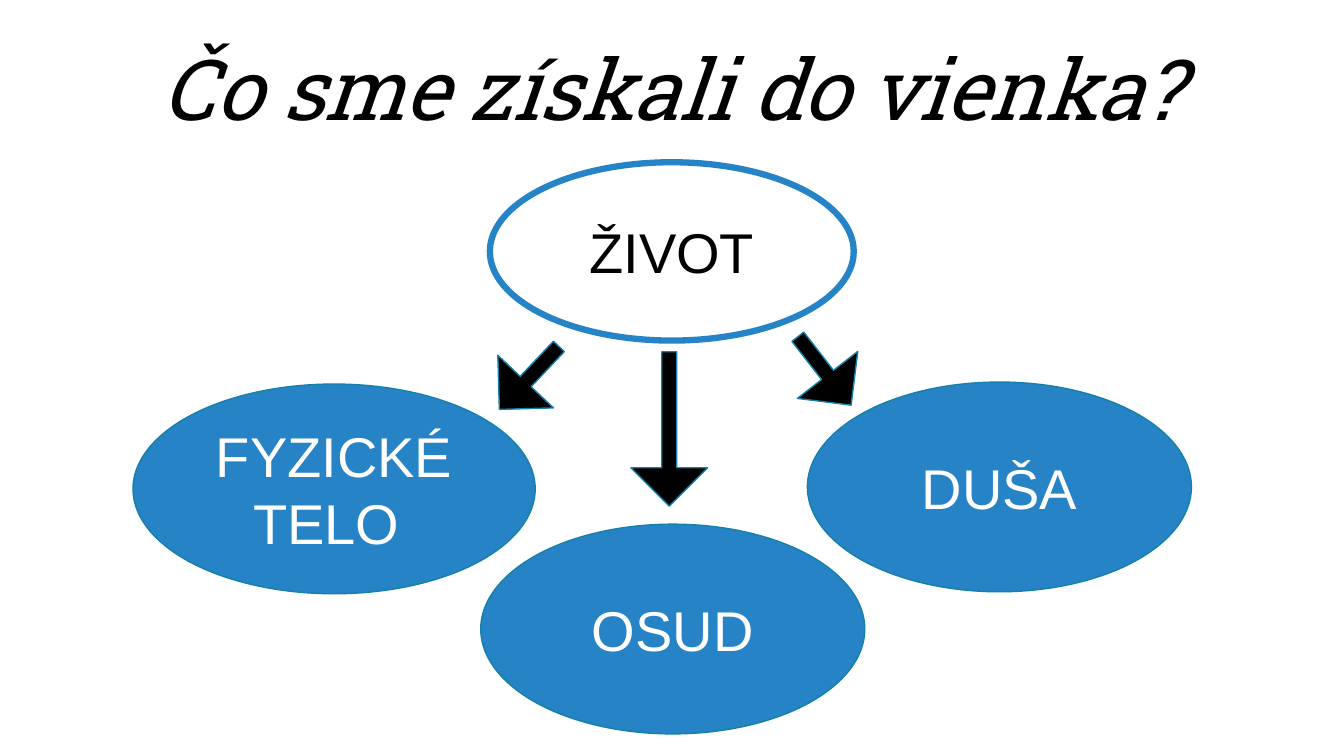
from pptx import Presentation
from pptx.dml.color import RGBColor as Rgb
from pptx.enum.shapes import MSO_SHAPE as Kind
from pptx.enum.text import MSO_ANCHOR as Anchor, MSO_AUTO_SIZE as Fit, PP_ALIGN as Align
from pptx.util import Pt

HEX = {"blue": "2683C6", "edge": "1580A9", "black": "000000", "white": "FFFFFF"}
TITLE = {"name": "Roboto Slab", "size": Pt(60), "italic": True, "bold": False}
LABEL = {"name": "Arial", "size": Pt(40)}

# Label, left, top, width, height
PARTS = [
    ("FYZICKÉ TELO ", 95, 274.3, 287.3, 149.8),
    ("DUŠA", 576.7, 272.9, 274.3, 149.8),
    ("OSUD", 343.4, 374.4, 274.3, 149.8),
]
# Left, top, height, turn
ARROWS = [
    (561.6, 234, 61.9, 322.1),
    (450.7, 251.3, 110.2, 0),
    (350.6, 239, 61.9, 43.4),
]


def color(name):
    return Rgb.from_string(HEX[name])


def write(shape, text, style, ink, anchor):
    frame = shape.text_frame
    frame.word_wrap = True
    frame.auto_size = Fit.NONE
    frame.vertical_anchor = anchor
    para = frame.paragraphs[0]
    para.alignment = Align.CENTER
    run = para.add_run()
    run.text = text
    for key, value in style.items():
        setattr(run.font, key, value)
    run.font.color.rgb = color(ink)
    return para


def add_title(slide, text):
    title = slide.shapes.title
    box = {"left": 82.1, "top": 15.8, "width": 795.6, "height": 87.1}
    for key, value in box.items():
        setattr(title, key, Pt(value))
    para = write(title, text, TITLE, "black", Anchor.BOTTOM)
    para.line_spacing = 0.9


def add_form(slide, kind, box, fill, line="edge", width=1):
    shape = slide.shapes.add_shape(kind, *map(Pt, box))
    shape.shadow.inherit = False
    shape.fill.solid()
    shape.fill.fore_color.rgb = color(fill)
    shape.line.color.rgb = color(line)
    shape.line.width = Pt(width)
    return shape


def add_oval(slide, text, box, fill="blue", ink="white", **edge):
    oval = add_form(slide, Kind.OVAL, box, fill, **edge)
    write(oval, text, LABEL, ink, Anchor.MIDDLE)


def add_arrow(slide, left, top, height, turn):
    arrow = add_form(slide, Kind.DOWN_ARROW, (left, top, 54.7, height), "black")
    arrow.adjustments[0] = 0.196
    arrow.adjustments[1] = 0.5
    arrow.rotation = turn


def main():
    deck = Presentation()
    deck.slide_width, deck.slide_height = Pt(960), Pt(540)
    slide = deck.slides.add_slide(deck.slide_layouts[5])
    add_title(slide, "Čo sme získali do vienka?")

    # Gifts of life, then life itself
    for text, *box in PARTS:
        add_oval(slide, text, box)
    add_oval(slide, "ŽIVOT", (349.9, 115.9, 259.9, 127.4),
             "white", "black", line="blue", width=4.5)

    # Arrows from life to each gift
    for arrow in ARROWS:
        add_arrow(slide, *arrow)

    deck.save("out.pptx")


if __name__ == "__main__":
    main()
